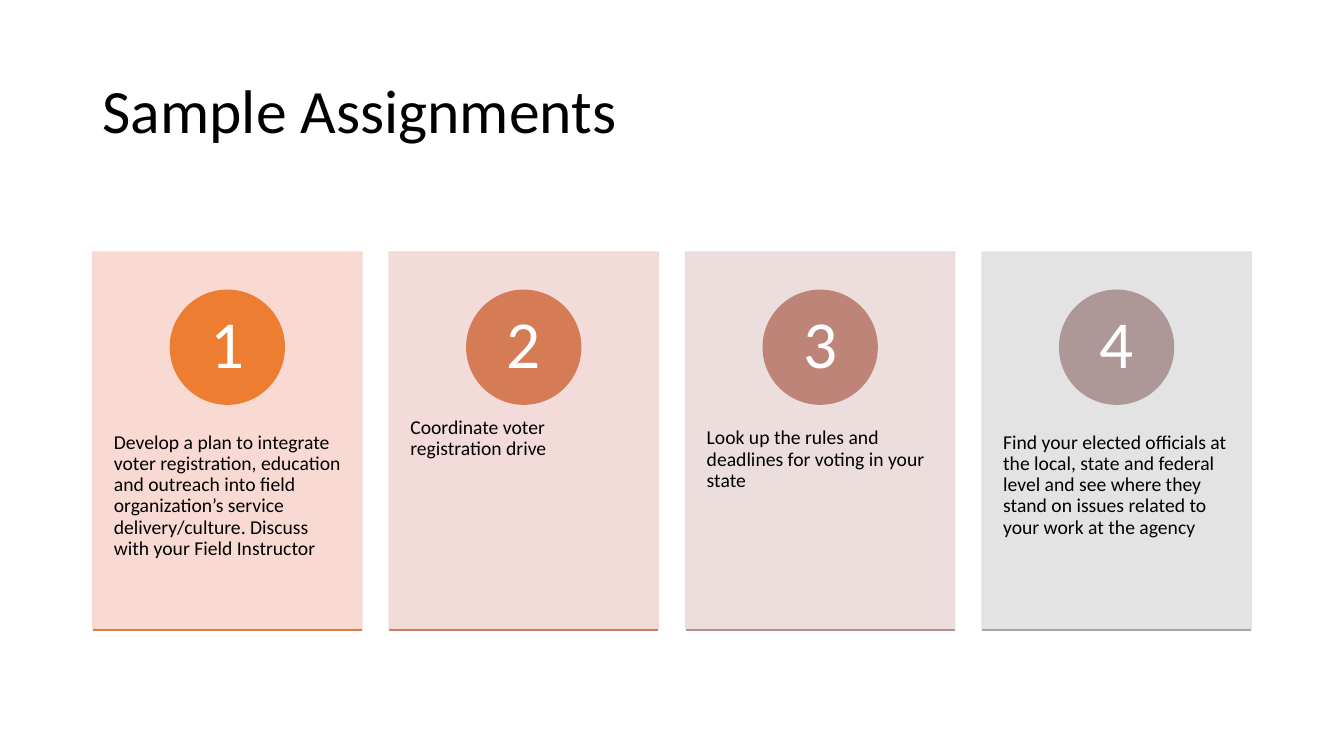
from dataclasses import dataclass

from lxml import etree
from pptx import Presentation
from pptx.dml.color import RGBColor
from pptx.dml.fill import FillFormat
from pptx.enum.shapes import MSO_CONNECTOR, MSO_SHAPE
from pptx.enum.text import MSO_ANCHOR, PP_ALIGN
from pptx.oxml.ns import qn
from pptx.shapes.autoshape import Shape
from pptx.slide import Slide
from pptx.text.text import TextFrame
from pptx.util import Inches, Pt

RECTANGLE, OVAL = MSO_SHAPE.RECTANGLE, MSO_SHAPE.OVAL
STRAIGHT = MSO_CONNECTOR.STRAIGHT
TOP, MIDDLE = MSO_ANCHOR.TOP, MSO_ANCHOR.MIDDLE
LEFT, CENTER = PP_ALIGN.LEFT, PP_ALIGN.CENTER


@dataclass(frozen=True)
class Theme:
    font: str = "Calibri"
    text: str = "000000"
    number: str = "FFFFFF"
    title_size: float = 44
    number_size: float = 48
    body_size: float = 14
    line_width: float = 1
    card_opacity: int = 90


@dataclass(frozen=True)
class Assignment:
    text: str
    card: str
    circle: str
    rule: str


THEME = Theme()

ASSIGNMENTS = [
    Assignment(
        "Develop a plan to integrate voter registration, education and outreach into "
        "field organization’s service delivery/culture. Discuss with your Field Instructor",
        "F8D7CE", "ED7D31", "E07A44"),
    Assignment("Coordinate voter registration drive", "F1D8D4", "D57B56", "CA7E67"),
    Assignment("Look up the rules and deadlines for voting in your state",
               "E9DBDA", "BF8478", "B68D88"),
    Assignment(
        "Find your elected officials at the local, state and federal level and see "
        "where they stand on issues related to your work at the agency",
        "E1E1E1", "AD9897", "A5A5A5"),
]

MARGIN = 0.92
CARD_TOP, CARD_WIDTH, CARD_HEIGHT = 2.5, 2.67, 3.74
CARD_PITCH = 2.94
CIRCLE_TOP, CIRCLE_SIZE = 2.88, 1.13
BODY_TOP, BODY_HEIGHT = 3.93, 2.25


def set_opacity(fill: FillFormat, percent: int) -> None:
    color = fill._xPr.find(qn("a:solidFill"))[0]
    etree.SubElement(color, qn("a:alpha"), val=str(percent * 1000))


def set_text(tf: TextFrame, text: str, size: float, color: str, align: PP_ALIGN = LEFT,
             anchor: MSO_ANCHOR = TOP, inset_x: float = 0.1, inset_y: float = 0.05) -> None:
    tf.text = text
    tf.word_wrap = True
    tf.vertical_anchor = anchor
    tf.margin_left = tf.margin_right = Inches(inset_x)
    tf.margin_top = tf.margin_bottom = Inches(inset_y)
    p = tf.paragraphs[0]
    p.alignment = align
    p.line_spacing = 0.9
    font = p.runs[0].font
    font.name = THEME.font
    font.size = Pt(size)
    font.color.rgb = RGBColor.from_string(color)


def add_block(s: Slide, kind: MSO_SHAPE, left: float, top: float, width: float,
              height: float, color: str, opacity: int = 100) -> Shape:
    """Add a shape whose fill and outline share one colour."""
    sp = s.shapes.add_shape(kind, Inches(left), Inches(top), Inches(width), Inches(height))
    sp.shadow.inherit = False
    sp.line.width = Pt(THEME.line_width)
    for fill in (sp.fill, sp.line.fill):
        fill.solid()
        fill.fore_color.rgb = RGBColor.from_string(color)
        if opacity < 100:
            set_opacity(fill, opacity)
    return sp


def add_rule(s: Slide, left: float, top: float, width: float, color: str) -> None:
    rule = s.shapes.add_connector(STRAIGHT, Inches(left), Inches(top),
                                  Inches(left + width), Inches(top))
    rule.line.width = Pt(THEME.line_width)
    rule.line.color.rgb = RGBColor.from_string(color)
    etree.SubElement(rule._element.spPr, qn("a:effectLst"))


def add_text(s: Slide, left: float, top: float, width: float, height: float) -> TextFrame:
    box = s.shapes.add_textbox(Inches(left), Inches(top), Inches(width), Inches(height))
    return box.text_frame


def add_assignment(s: Slide, left: float, number: int, item: Assignment) -> None:
    add_block(s, RECTANGLE, left, CARD_TOP, CARD_WIDTH, CARD_HEIGHT, item.card,
              THEME.card_opacity)
    body = add_text(s, left, BODY_TOP, CARD_WIDTH, BODY_HEIGHT)
    set_text(body, item.text, THEME.body_size, THEME.text, inset_x=0.21, inset_y=0.36)
    circle_left = left + (CARD_WIDTH - CIRCLE_SIZE) / 2
    circle = add_block(s, OVAL, circle_left, CIRCLE_TOP, CIRCLE_SIZE, CIRCLE_SIZE,
                       item.circle)
    set_text(circle.text_frame, str(number), THEME.number_size, THEME.number, CENTER,
             MIDDLE, inset_x=0.09, inset_y=0.01)
    add_rule(s, left, CARD_TOP + CARD_HEIGHT + 0.01, CARD_WIDTH, item.rule)


def main() -> None:
    prs = Presentation()
    prs.slide_width, prs.slide_height = Inches(13.33), Inches(7.5)
    s = prs.slides.add_slide(prs.slide_layouts[6])
    title = add_text(s, MARGIN, 0.4, 11.5, 1.45)
    set_text(title, "Sample Assignments", THEME.title_size, THEME.text, anchor=MIDDLE)
    for i, item in enumerate(ASSIGNMENTS):
        add_assignment(s, MARGIN + i * CARD_PITCH, i + 1, item)
    prs.save("out.pptx")


if __name__ == "__main__":
    main()
